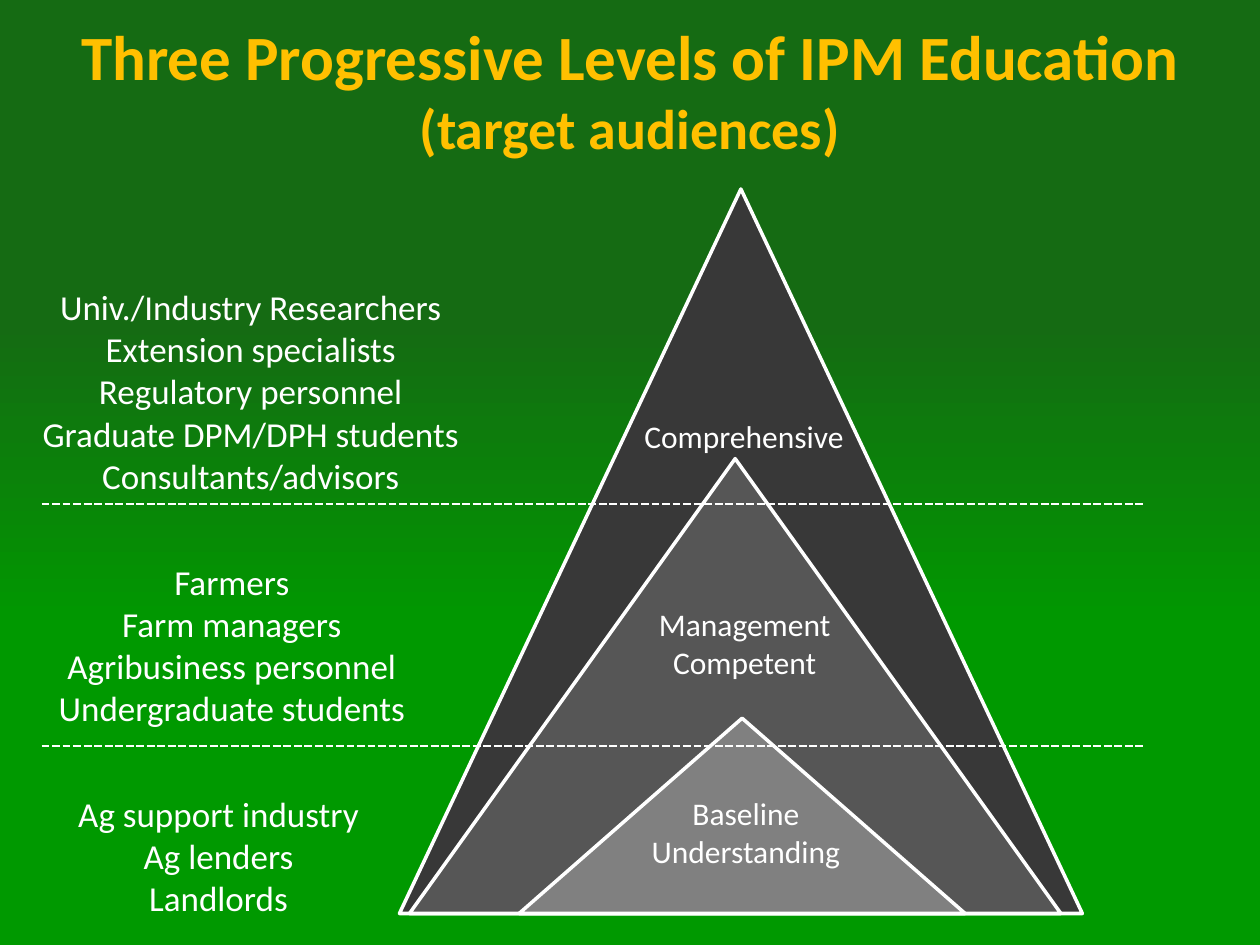
from lxml.etree import SubElement
from pptx import Presentation
from pptx.dml.color import RGBColor
from pptx.enum.dml import MSO_LINE
from pptx.enum.shapes import MSO_CONNECTOR, MSO_SHAPE
from pptx.enum.text import MSO_ANCHOR, MSO_AUTO_SIZE, PP_ALIGN
from pptx.oxml.ns import qn
from pptx.util import Inches, Pt

WHITE = "FFFFFF"
GOLD = "FFC000"
BACKGROUND = [(0.34, "156B13"), (0.67, "009900")]
LEVELS = [
    ((3.17, 1.5, 5.42, 5.75), "383838"),
    ((3.25, 3.64, 5.17, 3.61), "565656"),
    ((4.12, 5.7, 3.54, 1.55), "808080"),
]
LEVEL_NAMES = [
    ((5.07, 4.75, 1.68, 0.71), ["Management", "Competent"]),
    ((5, 6.25, 1.84, 0.71), ["Baseline", "Understanding"]),
    ((4.92, 3.26, 1.97, 0.4), ["Comprehensive"]),
]
AUDIENCES = [
    ((0.22, 2.22, 3.54, 1.78), [
        "Univ./Industry Researchers", "Extension specialists",
        "Regulatory personnel", "Graduate DPM/DPH students",
        "Consultants/advisors"]),
    ((0.35, 4.4, 2.98, 1.45), [
        "Farmers", "Farm managers", "Agribusiness personnel",
        "Undergraduate students"]),
    ((0.51, 6.24, 2.45, 1.11), [
        "Ag support industry", "Ag lenders", "Landlords"]),
]
DIVIDERS = [5.92, 4]


def color(value):
    return RGBColor.from_string(value)


def apply(target, formats):
    for name, value in formats.items():
        setattr(target, name, value)


def inches(box):
    return [Inches(length) for length in box]


def add_background(slide):
    fill = slide.background.fill
    fill.gradient()
    fill.gradient_angle = 270
    for stop, (position, shade) in zip(fill.gradient_stops, BACKGROUND):
        stop.position = position
        stop.color.rgb = color(shade)


def add_lines(slide, box, lines, shade=WHITE, bold=False, wrap=True):
    frame = slide.shapes.add_textbox(*inches(box)).text_frame
    apply(frame, {
        "word_wrap": wrap,
        "auto_size": MSO_AUTO_SIZE.SHAPE_TO_FIT_TEXT,
        "vertical_anchor": MSO_ANCHOR.TOP,
    })
    for index, (wording, size) in enumerate(lines):
        paragraph = frame.add_paragraph() if index else frame.paragraphs[0]
        paragraph.alignment = PP_ALIGN.CENTER
        run = paragraph.add_run()
        run.text = wording
        apply(run.font, {"name": "Calibri", "size": Pt(size), "bold": bold})
        run.font.color.rgb = color(shade)


def add_level(slide, box, shade):
    level = slide.shapes.add_shape(MSO_SHAPE.ISOSCELES_TRIANGLE, *inches(box))
    level.shadow.inherit = False
    level.fill.solid()
    level.fill.fore_color.rgb = color(shade)
    level.line.color.rgb = color(WHITE)
    level.line.width = Pt(2)


def add_divider(slide, left, right, top):
    divider = slide.shapes.add_connector(
        MSO_CONNECTOR.STRAIGHT, *inches((left, top, right, top)))
    divider.line.color.rgb = color(WHITE)
    apply(divider.line, {
        "width": Pt(1.5), "dash_style": MSO_LINE.SQUARE_DOT})
    SubElement(divider._element.spPr, qn("a:effectLst"))


def add_pyramid(slide):
    for box, shade in LEVELS:
        add_level(slide, box, shade)
    for box, words in LEVEL_NAMES:
        add_lines(slide, box, [(word, 18) for word in words])


def add_audiences(slide):
    for top in DIVIDERS:
        add_divider(slide, 0.33, 9.08, top)
    for box, groups in AUDIENCES:
        add_lines(slide, box, [(group, 20) for group in groups], wrap=False)


def add_title(slide, box):
    add_lines(slide, box, [
        ("Three Progressive Levels of IPM Education", 36),
        ("(target audiences)", 32),
    ], shade=GOLD, bold=True)


def main():
    deck = Presentation()
    apply(deck, {"slide_width": Inches(10), "slide_height": Inches(7.5)})
    slide = deck.slides.add_slide(deck.slide_layouts[6])
    add_background(slide)
    add_pyramid(slide)
    add_audiences(slide)
    add_title(slide, (0.5, 0.09, 9, 1.25))
    deck.save("out.pptx")


if __name__ == "__main__":
    main()
